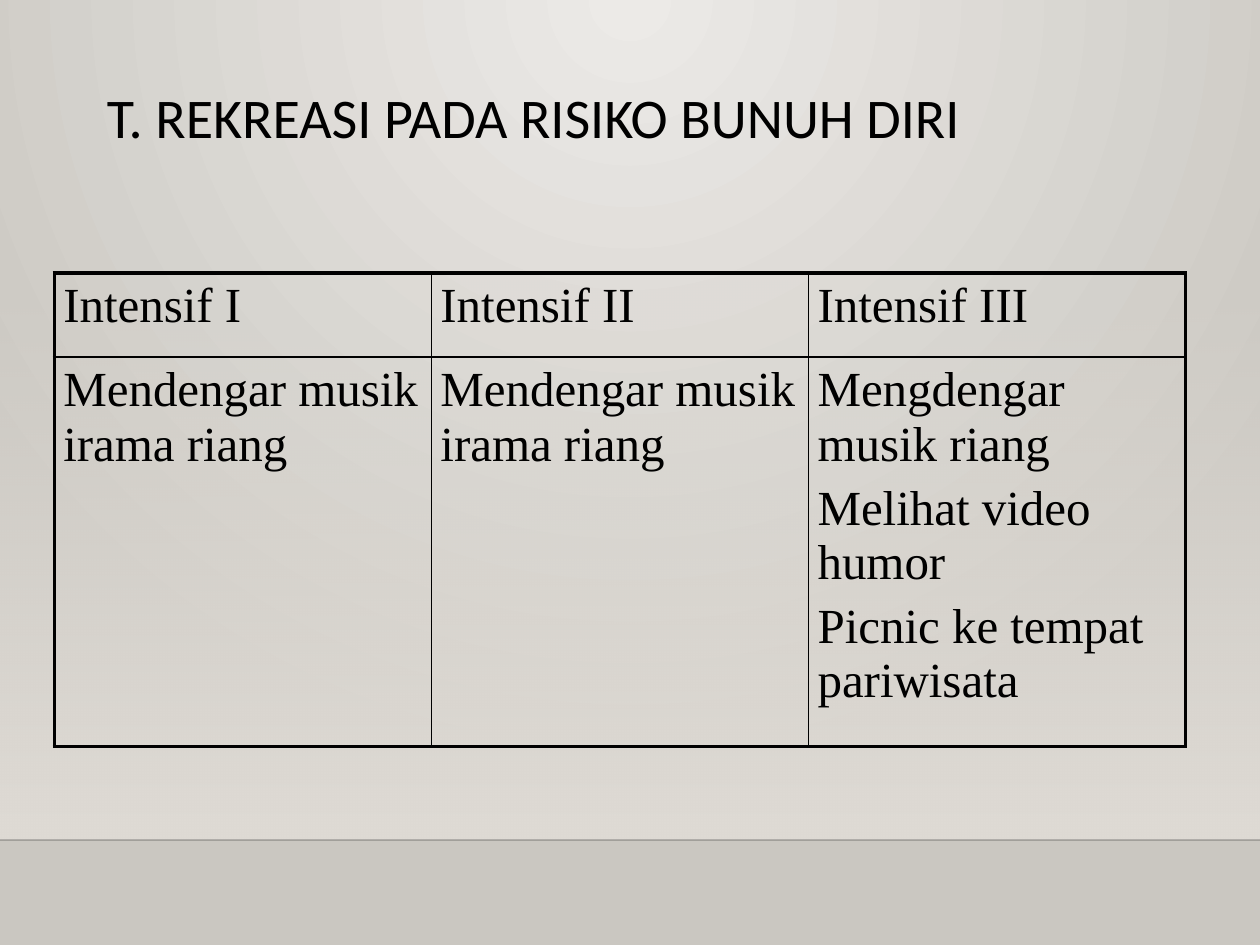
"""Build a slide with a table of recreation therapy by intensive phase."""
import dataclasses
import typing

import pptx
import pptx.dml.color
import pptx.enum.shapes
import pptx.oxml
import pptx.oxml.ns
import pptx.util

Pt = pptx.util.Pt
RGBColor = pptx.dml.color.RGBColor
qn = pptx.oxml.ns.qn

BLACK = RGBColor(0x00, 0x00, 0x00)
HORIZON = RGBColor(0x00, 0x00, 0x01)
GLOW = RGBColor(0xEC, 0xEA, 0xE7)
EDGE = RGBColor(0xCA, 0xC7, 0xC1)
WALL = RGBColor(0xDF, 0xDB, 0xD5)
NAMESPACE = pptx.oxml.ns.nsdecls("a")
WIDTH, HEIGHT, FLOOR = 720, 540, 480
COLUMN_WIDTH = 215.5
THICK, THIN = 2.25, 1
RADIAL = '<a:path path="circle"><a:fillToRect l="43000" t="0" r="43000" b="100000"/></a:path>'
DOWNWARD = '<a:lin ang="5400000" scaled="0"/>'


@dataclasses.dataclass(frozen=True)
class Stop:
    """A gradient stop with position and opacity in percent."""

    position: int
    color: RGBColor
    opacity: int = 100


@dataclasses.dataclass(frozen=True)
class Row:
    """A table row with its height and the paragraphs of each cell."""

    height: float
    cells: tuple[tuple[str, ...], ...]


ROWS = (
    Row(48, (("Intensif I",), ("Intensif II",), ("Intensif III",))),
    Row(222.5, (
        ("Mendengar musik irama riang",),
        ("Mendengar musik irama riang",),
        ("Mengdengar musik riang", "Melihat video humor", "Picnic ke tempat pariwisata"),
    )),
)


def set_gradient(owner: typing.Any, fill: typing.Any, stops: tuple[Stop, ...], direction: str) -> None:
    """Give the owner's fill the stops and direction."""
    fill.gradient()
    old = owner.find(".//" + qn("a:gradFill"))
    marks = "".join(
        f'<a:gs pos="{stop.position * 1000}"><a:srgbClr val="{stop.color}">'
        f'<a:alpha val="{stop.opacity * 1000}"/></a:srgbClr></a:gs>'
        for stop in stops
    )
    old.getparent().replace(old, pptx.oxml.parse_xml(
        f'<a:gradFill {NAMESPACE} rotWithShape="1"><a:gsLst>{marks}</a:gsLst>{direction}</a:gradFill>'
    ))


def add_span(para: typing.Any, text: str, size: float, font: str) -> None:
    """Add one black run to a paragraph."""
    span = para.add_run()
    span.text = text
    span.font.size = Pt(size)
    span.font.name = font
    span.font.color.rgb = BLACK


def draw_backdrop(page: typing.Any) -> None:
    """Draw the lit wall, the floor and the line between them."""
    set_gradient(page.element, page.background.fill, (Stop(0, GLOW), Stop(100, EDGE)), RADIAL)
    wall = page.shapes.add_shape(
        pptx.enum.shapes.MSO_SHAPE.RECTANGLE, Pt(0), Pt(158.5), Pt(WIDTH), Pt(FLOOR - 158.5)
    )
    wall.shadow.inherit = False
    wall.line.fill.background()
    set_gradient(wall.element, wall.fill, (Stop(0, WALL, 0), Stop(100, WALL)), DOWNWARD)
    horizon = page.shapes.add_connector(
        pptx.enum.shapes.MSO_CONNECTOR.STRAIGHT, Pt(0), Pt(FLOOR), Pt(WIDTH), Pt(FLOOR)
    )
    horizon.line.width = Pt(1)
    horizon.line.color.rgb = HORIZON
    color = horizon.element.find(".//" + qn("a:ln")).find(".//" + qn("a:srgbClr"))
    color.append(pptx.oxml.parse_xml(f'<a:alpha {NAMESPACE} val="20000"/>'))
    horizon.element.spPr.append(pptx.oxml.parse_xml(f"<a:effectLst {NAMESPACE}/>"))


def draw_title(page: typing.Any) -> None:
    """Write the slide title."""
    box = page.shapes.add_textbox(Pt(54), Pt(48), Pt(612), Pt(90))
    box.text_frame.word_wrap = True
    para = box.text_frame.paragraphs[0]
    para.line_spacing = 0.9
    add_span(para, "T. REKREASI PADA RISIKO BUNUH DIRI", 32, "Calibri")


def set_borders(cell: typing.Any, widths: dict[str, float]) -> None:
    """Set the cell borders, keyed by side in schema order."""
    properties = cell._tc.get_or_add_tcPr()
    for index, (side, width) in enumerate(widths.items()):
        properties.insert(index, pptx.oxml.parse_xml(
            f'<a:ln{side} {NAMESPACE} w="{Pt(width)}"><a:solidFill><a:srgbClr val="{BLACK}"/>'
            f'</a:solidFill><a:prstDash val="solid"/></a:ln{side}>'
        ))


def fill_cell(cell: typing.Any, texts: tuple[str, ...]) -> None:
    """Write the paragraphs of a transparent cell."""
    cell.fill.background()
    cell.margin_left = cell.margin_right = Pt(5.2)
    cell.margin_top = cell.margin_bottom = Pt(3.6)
    for index, text in enumerate(texts):
        para = cell.text_frame.add_paragraph() if index else cell.text_frame.paragraphs[0]
        if index:
            para.space_before = Pt(5.6)
        add_span(para, text, 28, "Times New Roman")


def draw_table(page: typing.Any) -> None:
    """Draw the table with a thick frame and thin inner lines."""
    count = len(ROWS[0].cells)
    table = page.shapes.add_table(
        len(ROWS), count, Pt(31), Pt(156), Pt(COLUMN_WIDTH * count), Pt(sum(row.height for row in ROWS))
    ).table
    table.first_row = table.horz_banding = False
    for column in table.columns:
        column.width = Pt(COLUMN_WIDTH)
    for down, row in enumerate(ROWS):
        table.rows[down].height = Pt(row.height)
        for across, texts in enumerate(row.cells):
            cell = table.cell(down, across)
            fill_cell(cell, texts)
            set_borders(cell, {
                "L": THICK if across == 0 else THIN,
                "R": THICK if across == count - 1 else THIN,
                "T": THICK if down == 0 else THIN,
                "B": THICK if down == len(ROWS) - 1 else THIN,
            })


def main() -> None:
    """Build and save the deck."""
    deck = pptx.Presentation()
    deck.slide_width, deck.slide_height = Pt(WIDTH), Pt(HEIGHT)
    page = deck.slides.add_slide(deck.slide_layouts[6])
    draw_backdrop(page)
    draw_title(page)
    draw_table(page)
    deck.save("out.pptx")


if __name__ == "__main__":
    main()
